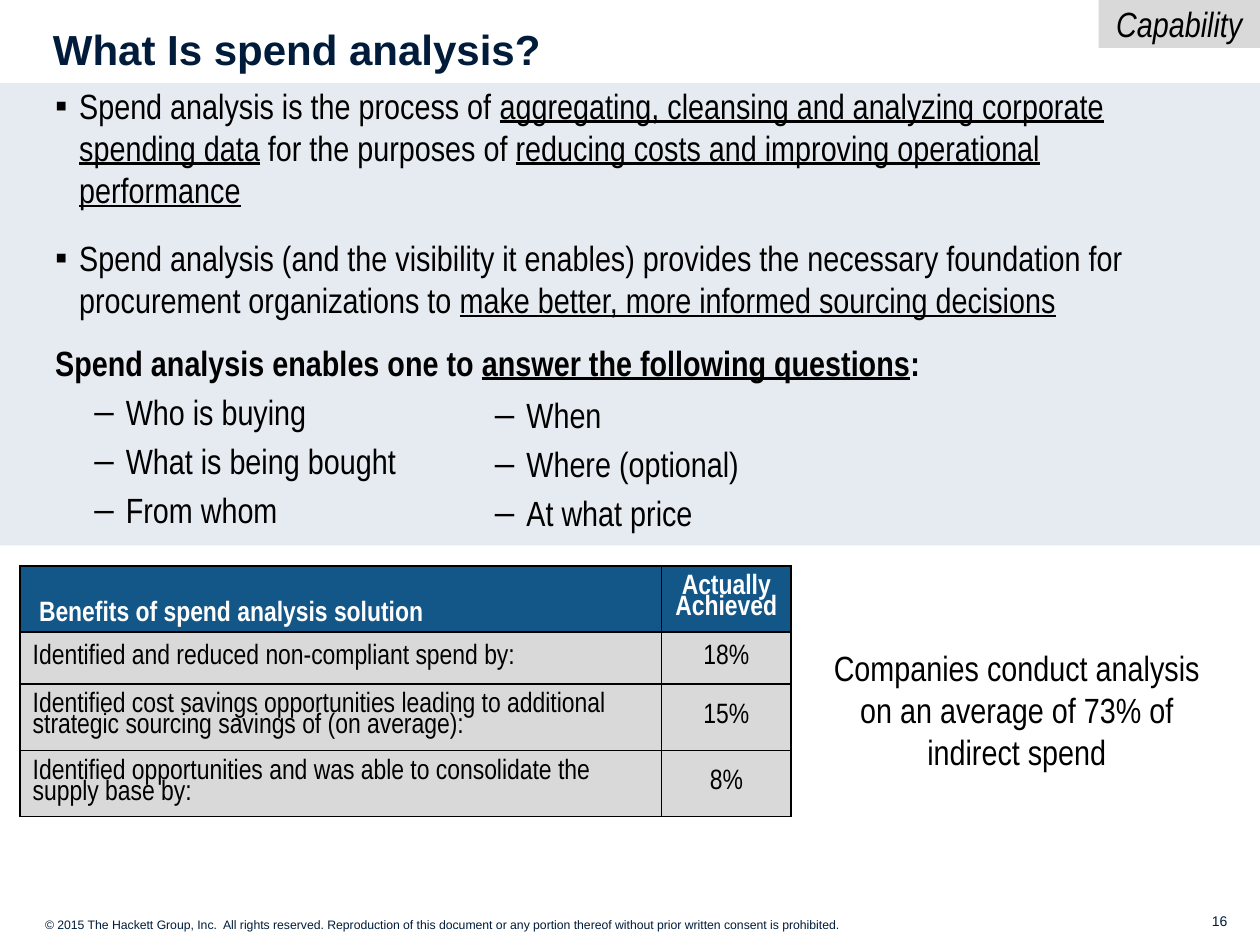
from lxml import etree
from pptx import Presentation
from pptx import util as u
from pptx.dml.color import RGBColor
from pptx.enum import shapes, text
from pptx.oxml import ns

NAVY = RGBColor(0x00, 0x1C, 0x3A)
BLACK = RGBColor(0x00, 0x00, 0x00)
WHITE = RGBColor(0xFF, 0xFF, 0xFF)
PALE = RGBColor(0xE6, 0xEB, 0xF1)
GREY = RGBColor(0xD9, 0xD9, 0xD9)
BLUE = RGBColor(0x13, 0x57, 0x89)
LEFT, CENTER, RIGHT = text.PP_ALIGN.LEFT, text.PP_ALIGN.CENTER, text.PP_ALIGN.RIGHT
MIDDLE, BOTTOM = text.MSO_ANCHOR.MIDDLE, text.MSO_ANCHOR.BOTTOM

BODY = {"name": "Arial Narrow", "size": u.Pt(20)}
CELL = {"name": "Arial Narrow", "size": u.Pt(16)}
HEADER = {**CELL, "bold": True}
TITLE = {"name": "Arial", "size": u.Pt(24), "bold": True}

SQUARE = {"bullet": ("▪", 0.19, 0.19), "before": 15}
DASH = {"bullet": ("–", 0.56, 0.25), "before": 4}
HEADING = {"before": 12, "look": {**BODY, "bold": True}}

POINTS = [
    (SQUARE, [("Spend analysis is the process of ", False),
              ("aggregating, cleansing and analyzing corporate spending data", True),
              (" for the purposes of ", False),
              ("reducing costs and improving operational performance", True)]),
    (SQUARE, [("Spend analysis (and the visibility it enables) provides the necessary "
               "foundation for procurement organizations to ", False),
              ("make better, more informed sourcing decisions", True)]),
    (HEADING, [("Spend analysis enables one to ", False),
               ("answer the following questions", True), (":", False)]),
]
LEFT_QUESTIONS = ["Who is buying", "What is being bought", "From whom"]
RIGHT_QUESTIONS = ["When", "Where (optional)", "At what price"]
BENEFITS = [
    ("Benefits of spend analysis solution", "Actually Achieved"),
    ("Identified and reduced non-compliant spend by:", "18%"),
    ("Identified cost savings opportunities leading to additional strategic "
     "sourcing savings of (on average):", "15%"),
    ("Identified opportunities and was able to consolidate the supply base by:", "8%"),
]
COLUMN_WIDTHS = [5.09, 1.03]
ROW_HEIGHTS = [0.52, 0.41, 0.52, 0.52]
COPYRIGHT = ("© 2015 The Hackett Group, Inc.  All rights reserved. Reproduction of this "
             "document or any portion thereof without prior written consent is prohibited.")


def place(*lengths):
    return [u.Inches(length) for length in lengths]


def style(font, look, color):
    for name, value in look.items():
        setattr(font, name, value)
    font.color.rgb = color


def write(para, spans, look, color=BLACK, align=LEFT):
    para.alignment = align
    for words, underlined in spans:
        span = para.add_run()
        span.text = words
        style(span.font, look, color)
        if underlined:
            span.font.underline = True


def add_bullet(para, mark, margin, hang):
    props = para._p.get_or_add_pPr()
    props.set("marL", str(u.Inches(margin)))
    props.set("indent", str(-u.Inches(hang)))
    color = etree.SubElement(props, ns.qn("a:buClr"))
    etree.SubElement(color, ns.qn("a:srgbClr"), val=str(BLACK))
    etree.SubElement(props, ns.qn("a:buFont"), typeface="Arial")
    etree.SubElement(props, ns.qn("a:buChar"), char=mark)


def add_text(at, words, look=BODY, color=BLACK, align=LEFT):
    box = slide.shapes.add_textbox(*place(*at))
    box.text_frame.word_wrap = True
    write(box.text_frame.paragraphs[0], [(words, False)], look, color, align)


def add_list(at, items):
    frame = slide.shapes.add_textbox(*place(*at)).text_frame
    frame.word_wrap = True
    for index, (kind, spans) in enumerate(items):
        para = frame.add_paragraph() if index else frame.paragraphs[0]
        if index:
            para.space_before = u.Pt(kind["before"])
        if "bullet" in kind:
            add_bullet(para, *kind["bullet"])
        write(para, spans, kind.get("look", BODY))


def dashed(questions):
    return [(DASH, [(question, False)]) for question in questions]


def add_rectangle(at, fill):
    box = slide.shapes.add_shape(shapes.MSO_SHAPE.RECTANGLE, *place(*at))
    box.shadow.inherit = False
    box.fill.solid()
    box.fill.fore_color.rgb = fill
    box.line.fill.background()
    return box


def add_borders(cell):
    props = cell._tc.get_or_add_tcPr()
    for index, side in enumerate(("lnL", "lnR", "lnT", "lnB")):
        line = etree.Element(ns.qn("a:" + side), w=str(u.Pt(1)))
        fill = etree.SubElement(line, ns.qn("a:solidFill"))
        etree.SubElement(fill, ns.qn("a:srgbClr"), val=str(BLACK))
        props.insert(index, line)


def add_benefits(left, top):
    size = (sum(COLUMN_WIDTHS), sum(ROW_HEIGHTS))
    table = slide.shapes.add_table(len(BENEFITS), len(COLUMN_WIDTHS),
                                   *place(left, top, *size)).table
    for column, width in zip(table.columns, COLUMN_WIDTHS):
        column.width = u.Inches(width)
    for r, (row, height) in enumerate(zip(table.rows, ROW_HEIGHTS)):
        row.height = u.Inches(height)
        for c, cell in enumerate(row.cells):
            first = r == 0
            cell.fill.solid()
            cell.fill.fore_color.rgb = BLUE if first else GREY
            cell.vertical_anchor = BOTTOM if first and c == 0 else MIDDLE
            if first and c == 0:
                cell.margin_left = u.Inches(0.15)
            para = cell.text_frame.paragraphs[0]
            para.line_spacing = 0.8
            write(para, [(BENEFITS[r][c], False)], HEADER if first else CELL,
                  WHITE if first else BLACK, CENTER if c else LEFT)
            add_borders(cell)


deck = Presentation()
deck.slide_width, deck.slide_height = place(10, 7.5)
slide = deck.slides.add_slide(deck.slide_layouts[5])

add_text((4.49, 7.19, 5.35, 0.24), "16", {"name": "Arial", "size": u.Pt(8)}, NAVY, RIGHT)
add_text((0.26, 7.23, 7.53, 0.22), COPYRIGHT, {"name": "Arial", "size": u.Pt(7)}, NAVY)
add_rectangle((0, 0.66, 10, 3.67), PALE)

title = slide.shapes.title
title.left, title.top, title.width, title.height = place(0.34, 0.16, 9.33, 0.5)
frame = title.text_frame
margins = {"margin_left": 0.08, "margin_top": 0.04, "margin_right": 0.08, "margin_bottom": 0.04}
for side, gap in margins.items():
    setattr(frame, side, u.Inches(gap))
frame.auto_size = text.MSO_AUTO_SIZE.NONE
frame.vertical_anchor = MIDDLE
frame.paragraphs[0].line_spacing = 0.9
write(frame.paragraphs[0], [("What Is spend analysis?", False)], TITLE, NAVY)

add_list((0.34, 0.62, 9.16, 3.71), POINTS + dashed(LEFT_QUESTIONS))
tag = add_rectangle((8.72, 0, 1.28, 0.38), GREY)
tag.text_frame.word_wrap = False
tag.text_frame.vertical_anchor = MIDDLE
write(tag.text_frame.paragraphs[0], [("Capability", False)],
      {**BODY, "italic": True}, BLACK, CENTER)
add_list((3.52, 3.07, 2.96, 1.25), dashed(RIGHT_QUESTIONS))
add_benefits(0.16, 4.49)
add_text((6.48, 5.08, 3.18, 1.11),
         "Companies conduct analysis on an average of 73% of indirect spend", align=CENTER)

deck.save("out.pptx")
